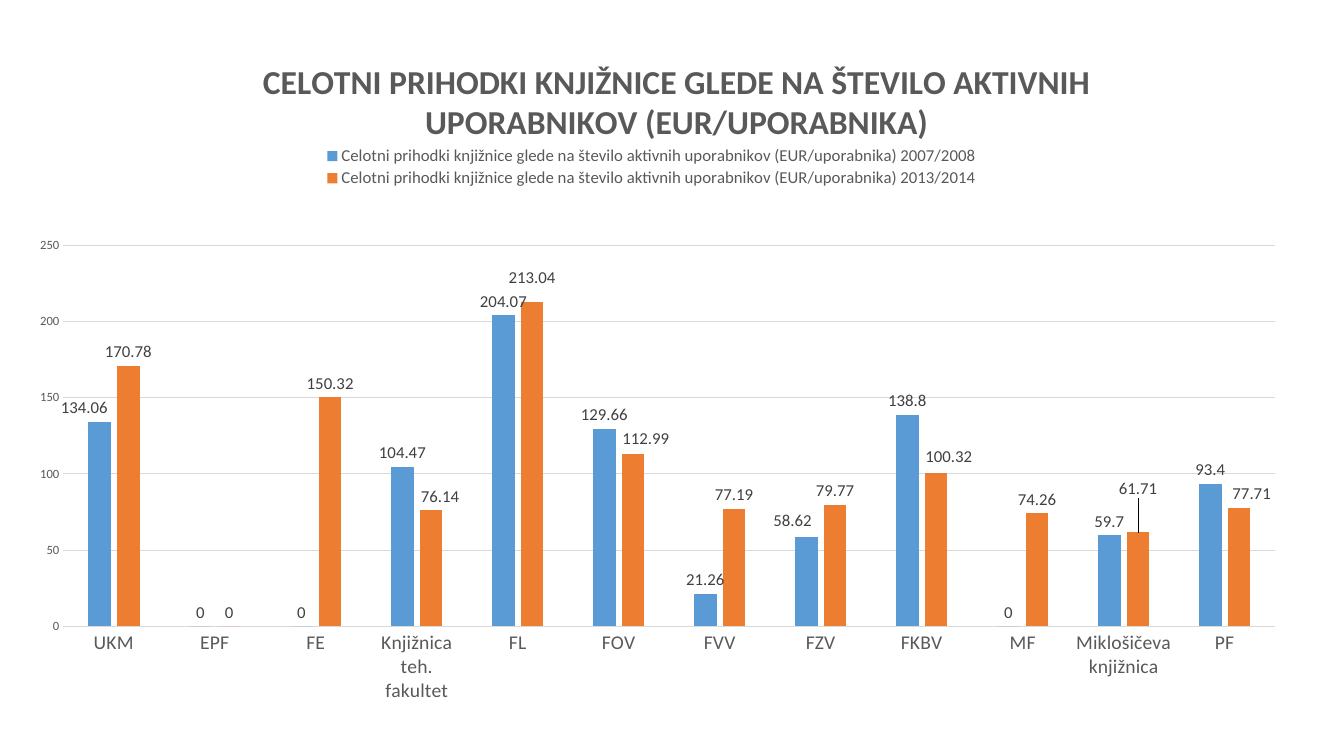
from collections import namedtuple
from dataclasses import dataclass

from lxml.etree import SubElement
from pptx import Presentation
from pptx.chart.data import CategoryChartData
from pptx.dml.color import RGBColor
from pptx.enum.chart import XL_CHART_TYPE, XL_LABEL_POSITION, XL_LEGEND_POSITION, XL_TICK_MARK
from pptx.oxml.ns import qn
from pptx.util import Cm, Pt

Box = namedtuple("Box", "left top width height")


@dataclass(frozen=True)
class Theme:
    font: str = "Calibri"
    text: str = "595959"
    label: str = "404040"
    grid: str = "D9D9D9"
    earlier: str = "5B9BD5"
    later: str = "ED7D31"
    title_size: int = 24
    category_size: int = 14
    label_size: int = 12
    value_size: int = 9
    line_width: float = 0.75


THEME = Theme()
TITLE = "CELOTNI PRIHODKI KNJIŽNICE GLEDE NA ŠTEVILO AKTIVNIH UPORABNIKOV (EUR/UPORABNIKA)"
MEASURE = "Celotni prihodki knjižnice glede na število aktivnih uporabnikov (EUR/uporabnika)"
LIBRARIES = ["UKM", "EPF", "FE", "Knjižnica teh. fakultet", "FL", "FOV", "FVV", "FZV",
             "FKBV", "MF", "Miklošičeva knjižnica", "PF"]
SERIES = [
    {"year": "2007/2008", "color": THEME.earlier,
     "values": [134.06, 0, 0, 104.47, 204.07, 129.66, 21.26, 58.62, 138.8, 0, 59.7, 93.4],
     "label_shifts": {0: (-0.012, 0), 7: (-0.011, -0.003)}},
    {"year": "2013/2014", "color": THEME.later,
     "values": [170.78, 0, 150.32, 76.14, 213.04, 112.99, 77.19, 79.77, 100.32, 74.26, 61.71, 77.71],
     "label_shifts": {3: (0.007, 0), 4: (0, -0.015), 5: (0.01, -0.003),
                      8: (0.01, -0.004), 10: (0, -0.045), 11: (0.01, 0)}},
]


def apply_format(target, values):
    for name, value in values.items():
        setattr(target, name, value)


def style_font(font, size, color, bold=False):
    apply_format(font, {"name": THEME.font, "size": Pt(size), "bold": bold})
    font.color.rgb = RGBColor.from_string(color)


def style_line(line):
    line.color.rgb = RGBColor.from_string(THEME.grid)
    line.width = Pt(THEME.line_width)


def place_part(parent, index, settings):
    for previous in parent.findall(qn("c:layout")):
        parent.remove(previous)
    layout = SubElement(parent, qn("c:layout"))
    manual = SubElement(layout, qn("c:manualLayout"))
    for name, value in settings.items():
        SubElement(manual, qn(f"c:{name}")).set("val", str(value))
    parent.insert(index, layout)


def style_title(chart):
    frame = chart.chart_title.text_frame
    frame.text = TITLE
    style_font(frame.paragraphs[0].runs[0].font, THEME.title_size, THEME.text, True)
    chart.chart_title.include_in_layout = False
    place_part(chart.chart_title._element, 1,
               {"xMode": "edge", "yMode": "edge", "x": 0.183, "y": 0.034})


def style_legend(chart):
    chart.has_legend = True
    apply_format(chart.legend, {"position": XL_LEGEND_POSITION.BOTTOM, "include_in_layout": False})
    style_font(chart.legend.font, THEME.label_size, THEME.text)
    place_part(chart.legend._element, 1,
               {"xMode": "edge", "yMode": "edge", "x": 0.235, "y": 0.17, "w": 0.52, "h": 0.07})


def style_axes(chart):
    tick_format = {"major_tick_mark": XL_TICK_MARK.NONE, "minor_tick_mark": XL_TICK_MARK.NONE}
    scale = {"minimum_scale": 0, "maximum_scale": 250, "major_unit": 50, "has_major_gridlines": True}
    apply_format(chart.category_axis, tick_format)
    apply_format(chart.value_axis, {**tick_format, **scale})
    style_font(chart.category_axis.tick_labels.font, THEME.category_size, THEME.text)
    style_font(chart.value_axis.tick_labels.font, THEME.value_size, THEME.text)
    style_line(chart.category_axis.format.line)
    style_line(chart.value_axis.major_gridlines.format.line)
    chart.value_axis.format.line.fill.background()


def style_series(series, entry):
    series.format.fill.solid()
    series.format.fill.fore_color.rgb = RGBColor.from_string(entry["color"])
    series.invert_if_negative = False
    apply_format(series.data_labels, {"show_value": True, "position": XL_LABEL_POSITION.OUTSIDE_END})
    style_font(series.data_labels.font, THEME.label_size, THEME.label)
    for index, (across, down) in entry["label_shifts"].items():
        label = series.points[index].data_label
        label.position = XL_LABEL_POSITION.OUTSIDE_END
        style_font(label.font, THEME.label_size, THEME.label)
        element = series._element.xpath(f"c:dLbls/c:dLbl[c:idx/@val='{index}']")[0]
        place_part(element, 1, {"x": across, "y": down})


def add_income_chart(page, box):
    data = CategoryChartData()
    data.categories = LIBRARIES
    for entry in SERIES:
        data.add_series(f"{MEASURE} {entry['year']}", entry["values"])
    chart = page.shapes.add_chart(XL_CHART_TYPE.COLUMN_CLUSTERED, *box, data).chart
    chart.font.name = THEME.font
    style_title(chart)
    style_legend(chart)
    style_axes(chart)
    plot = chart.plots[0]
    apply_format(plot, {"gap_width": 219, "overlap": -27, "vary_by_categories": False})
    for series, entry in zip(plot.series, SERIES):
        style_series(series, entry)
    place_part(chart._chartSpace.xpath("c:chart/c:plotArea")[0], 0,
               {"layoutTarget": "inner", "xMode": "edge", "yMode": "edge",
                "x": 0.03, "y": 0.322, "w": 0.958, "h": 0.57})


def main():
    deck = Presentation()
    apply_format(deck, {"slide_width": Cm(33.87), "slide_height": Cm(19.05)})
    page = deck.slides.add_slide(deck.slide_layouts[6])
    add_income_chart(page, Box(Cm(0.64), Cm(0.76), Cm(31.88), Cm(16.94)))
    deck.save("out.pptx")


if __name__ == "__main__":
    main()
